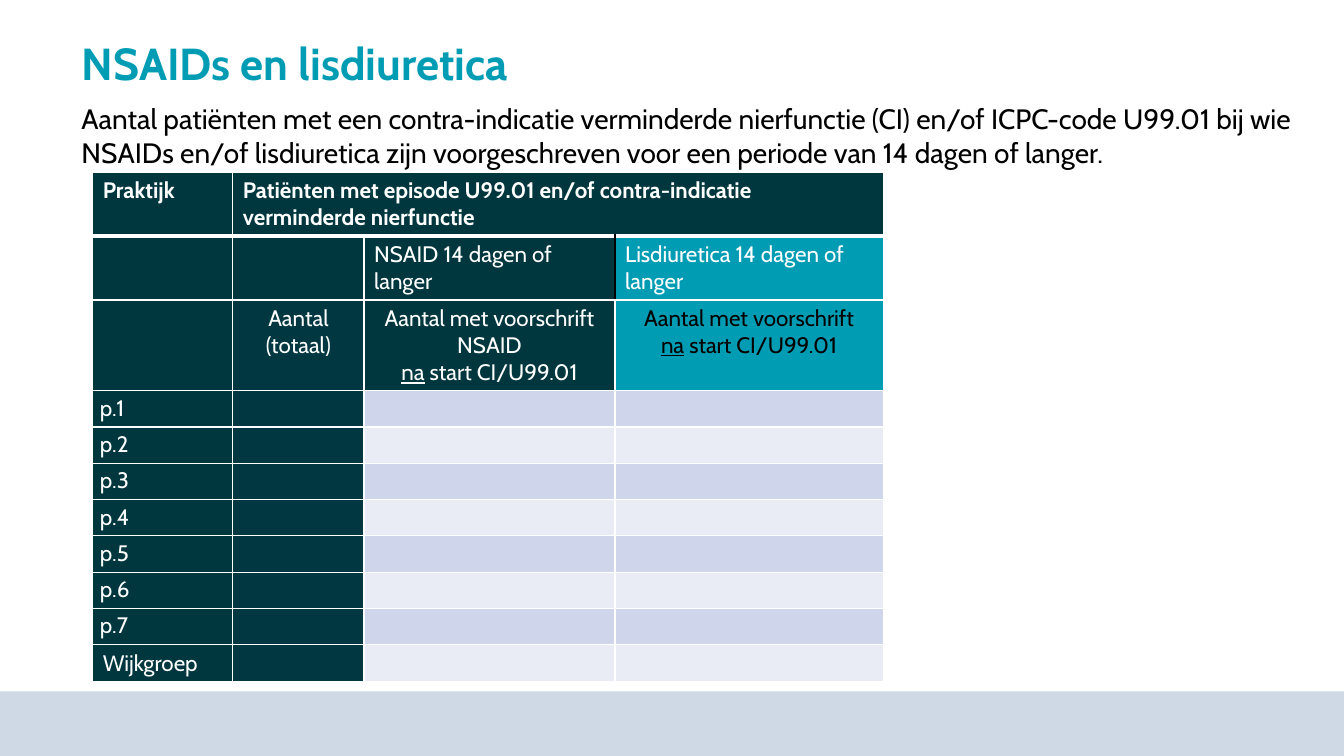
from lxml import etree
from pptx import Presentation
from pptx.dml.color import RGBColor
from pptx.enum.shapes import MSO_SHAPE as Shape
from pptx.enum.text import PP_ALIGN as Align
from pptx.oxml.ns import qn
from pptx.util import Inches, Pt

WHITE = RGBColor(0xFF, 0xFF, 0xFF)
BLACK = RGBColor(0, 0, 0)
TEAL = RGBColor(0x00, 0x9C, 0xB4)
DARK = RGBColor(0x00, 0x37, 0x3E)
DARK_TOTAL = RGBColor(0x00, 0x37, 0x41)
BAND_ODD = RGBColor(0xCF, 0xD5, 0xEA)
BAND_EVEN = RGBColor(0xE9, 0xEB, 0xF5)
FOOTER = RGBColor(0xCE, 0xD9, 0xE5)

COLUMN_WIDTHS = [1.39, 1.3, 2.49, 2.66]
PRACTICES = [f"p.{number}" for number in range(1, 8)]
ROW_HEIGHTS = [0.6, 0.6, 0.85] + [0.36] * len(PRACTICES) + [0.36]
AFTER_START = [("na", True), (" start CI/U99.01", False)]


def add_run(paragraph, text, **formats):
    run = paragraph.add_run()
    run.text = text
    color = formats.pop("color")
    for name, value in {"name": "Cabin", **formats}.items():
        setattr(run.font, name, value)
    run.font.color.rgb = color


def add_footer(slide, left, top, width, height):
    band = slide.shapes.add_shape(
        Shape.RECTANGLE, Inches(left), Inches(top), Inches(width), Inches(height))
    band.shadow.inherit = False
    band.fill.solid()
    band.fill.fore_color.rgb = FOOTER
    band.line.fill.background()


def add_text(slide, box, text, line_spacing=1.0, **formats):
    frame = slide.shapes.add_textbox(*map(Inches, box)).text_frame
    frame.word_wrap = True
    paragraph = frame.paragraphs[0]
    paragraph.line_spacing = line_spacing
    add_run(paragraph, text, **formats)


def set_borders(cell, **special):
    """Draw thin white borders, except sides given as side=(colour, points)."""
    properties = cell._tc.get_or_add_tcPr()
    for index, side in enumerate("LRTB"):
        color, points = special.get(side, (WHITE, 1))
        line = etree.Element(qn(f"a:ln{side}"), w=str(Pt(points)))
        fill = etree.SubElement(line, qn("a:solidFill"))
        etree.SubElement(fill, qn("a:srgbClr"), val=str(color))
        properties.insert(index, line)


def fill_cell(cell, fill, lines=(), color=WHITE, bold=False, align=Align.LEFT):
    """Fill a cell; each line is a list of (text, underlined) pieces."""
    cell.fill.solid()
    cell.fill.fore_color.rgb = fill
    frame = cell.text_frame
    for index, pieces in enumerate(lines):
        paragraph = frame.add_paragraph() if index else frame.paragraphs[0]
        paragraph.alignment = align
        for text, underline in pieces:
            add_run(paragraph, text, size=Pt(16), bold=bold,
                    underline=underline, color=color)
    if not lines:
        etree.SubElement(frame.paragraphs[0]._p, qn("a:endParaRPr"), sz="1200")


def fill_headings(table):
    heading = "Patiënten met episode U99.01 en/of contra-indicatie verminderde nierfunctie"
    for column, text in enumerate(["Praktijk", heading]):
        fill_cell(table.cell(0, column), DARK, [[(text, False)]], bold=True)
    for column in (2, 3):
        fill_cell(table.cell(0, column), DARK)
    table.cell(0, 1).merge(table.cell(0, 3))

    for row, column in [(1, 0), (1, 1), (2, 0)]:
        fill_cell(table.cell(row, column), DARK)
    fill_cell(table.cell(1, 2), DARK, [[("NSAID 14 dagen of langer", False)]])
    fill_cell(table.cell(1, 3), TEAL, [[("Lisdiuretica 14 dagen of langer", False)]])

    fill_cell(table.cell(2, 1), DARK_TOTAL, [[("Aantal (totaal)", False)]],
              align=Align.CENTER)
    fill_cell(table.cell(2, 2), DARK,
              [[("Aantal met voorschrift NSAID", False)], AFTER_START],
              align=Align.CENTER)
    fill_cell(table.cell(2, 3), TEAL,
              [[("Aantal met voorschrift", False)], AFTER_START],
              color=BLACK, align=Align.CENTER)


def fill_practices(table, first_row):
    for index, name in enumerate(PRACTICES + ["Wijkgroep"]):
        row = first_row + index
        label = table.cell(row, 0)
        fill_cell(label, DARK, [[(name, False)]])
        if name in PRACTICES:
            margins = {"margin_left": 0.07, "margin_top": 0,
                       "margin_right": 0.07, "margin_bottom": 0}
            for side, inches in margins.items():
                setattr(label, side, Inches(inches))
            paragraph = label.text_frame.paragraphs[0]
            paragraph.line_spacing = 1.15
            paragraph.space_after = Pt(10)
        fill_cell(table.cell(row, 1), DARK_TOTAL)
        for column in (2, 3):
            fill_cell(table.cell(row, column), BAND_EVEN if index % 2 else BAND_ODD)


def add_practice_table(slide, left, top):
    table = slide.shapes.add_table(
        len(ROW_HEIGHTS), len(COLUMN_WIDTHS), Inches(left), Inches(top),
        Inches(sum(COLUMN_WIDTHS)), Inches(sum(ROW_HEIGHTS))).table
    for column, width in zip(table.columns, COLUMN_WIDTHS):
        column.width = Inches(width)
    for row, height in zip(table.rows, ROW_HEIGHTS):
        row.height = Inches(height)
    fill_headings(table)
    fill_practices(table, first_row=3)

    special = {(0, column): {"B": (WHITE, 3)} for column in range(4)}
    special[1, 2] = {"R": (BLACK, 1)}
    special[1, 3] = {"L": (BLACK, 1)}
    for row in range(len(ROW_HEIGHTS)):
        for column in range(len(COLUMN_WIDTHS)):
            set_borders(table.cell(row, column), **special.get((row, column), {}))


def main():
    presentation = Presentation()
    presentation.slide_width = Inches(13.33)
    presentation.slide_height = Inches(7.5)
    slide = presentation.slides.add_slide(presentation.slide_layouts[6])
    add_footer(slide, 0, 6.86, 13.33, 0.64)
    add_text(slide, (0.71, 0.37, 10.68, 0.59), "NSAIDs en lisdiuretica",
             line_spacing=0.9, size=Pt(32), bold=True, color=TEAL)
    add_text(slide, (0.71, 0.96, 12.23, 0.77),
             "Aantal patiënten met een contra-indicatie verminderde nierfunctie (CI) "
             "en/of ICPC-code U99.01 bij wie NSAIDs en/of lisdiuretica zijn "
             "voorgeschreven voor een periode van 14 dagen of langer.",
             size=Pt(20), color=BLACK)
    add_practice_table(slide, 0.92, 1.71)
    presentation.save("out.pptx")


if __name__ == "__main__":
    main()
